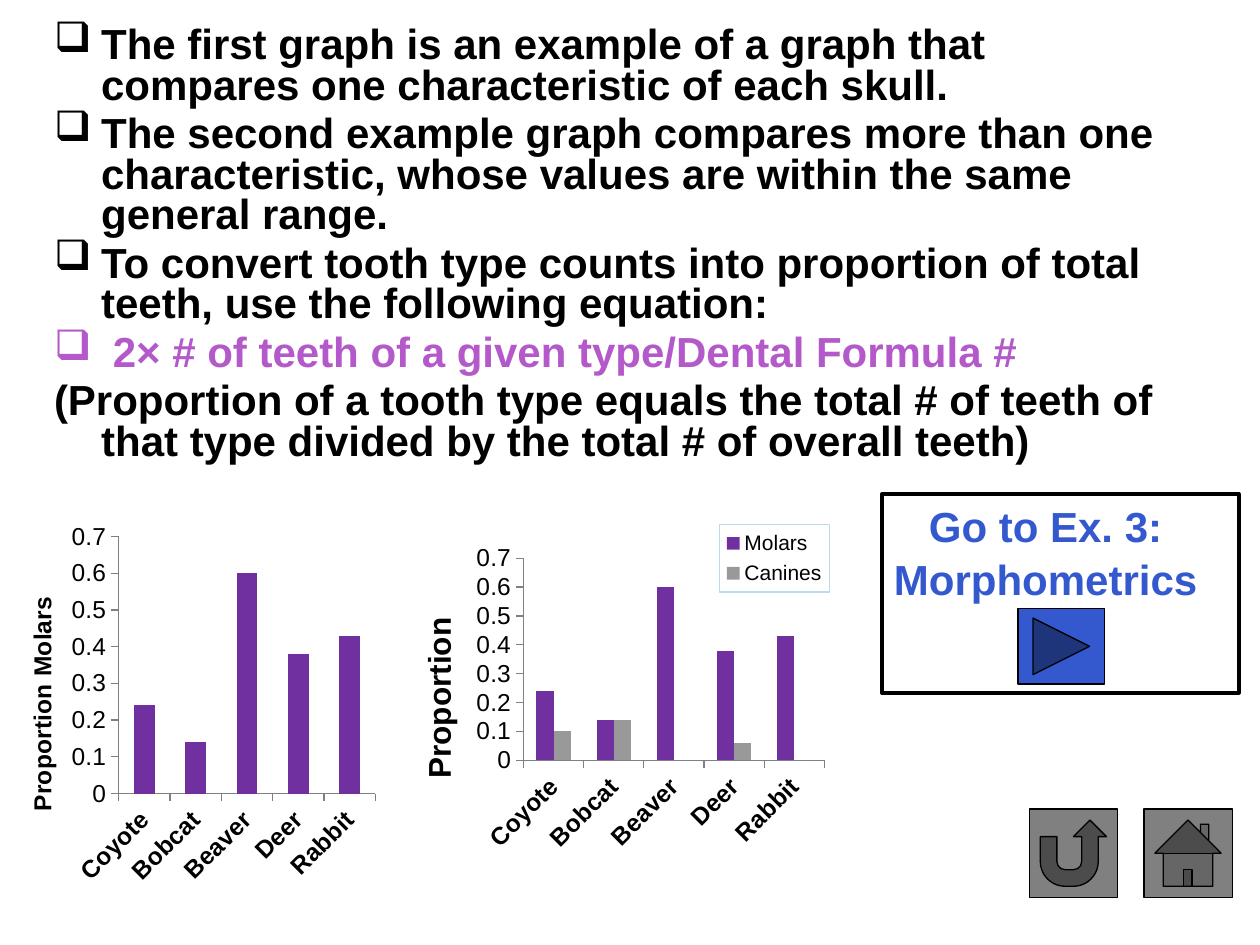
from lxml.etree import SubElement
from pptx import Presentation
from pptx.chart.data import CategoryChartData
from pptx.dml.color import RGBColor
from pptx.enum.chart import XL_CHART_TYPE, XL_LEGEND_POSITION, XL_TICK_MARK
from pptx.enum.shapes import MSO_SHAPE
from pptx.enum.text import PP_ALIGN
from pptx.oxml import parse_xml
from pptx.oxml.ns import nsdecls, qn
from pptx.util import Cm, Pt

FONT = "Arial"
COLORS = {"black": "000000", "orchid": "B459C9", "blue": "3459CE", "button": "808080",
          "purple": "7030A0", "gray": "999999", "axis": "808080", "legend": "B7DEE8"}

# Content: text, color, bullet
POINTS = [
    ("The first graph is an example of a graph that compares one characteristic of each skull.",
     "black", "❑"),
    ("The second example graph compares more than one characteristic, "
     "whose values are within the same general range.", "black", "❑"),
    ("To convert tooth type counts into proportion of total teeth, use the following equation:",
     "black", "❑"),
    (" 2× # of teeth of a given type/Dental Formula #", "orchid", "❑"),
    ("(Proportion of a tooth type equals the total # of teeth of that type "
     "divided by the total # of overall teeth)", "black", None),
]
LINK_LINES = ["Go to Ex. 3:", "Morphometrics"]
ANIMALS = ["Coyote", "Bobcat", "Beaver", "Deer", "Rabbit"]
MOLARS = [0.24, 0.14, 0.6, 0.38, 0.43]
CANINES = [0.1, 0.14, 0, 0.06, 0]

# Frames are left, top, width, height in cm; layouts are fractions of the chart
CHARTS = [
    {"frame": (0, 10.36, 7.72, 7.62), "title": "Proportion Molars", "title_size": 14,
     "plot": (0.31, 0.06, 0.67, 0.68), "legend": None,
     "series": [("Series 1", MOLARS, "purple")]},
    {"frame": (8.05, 9.73, 9.63, 8.48), "title": "Proportion", "title_size": 18,
     "plot": (0.26, 0.18, 0.63, 0.48), "legend": (0.67, 0.1, 0.23, 0.16),
     "series": [("Molars", MOLARS, "purple"), ("Canines", CANINES, "gray")]},
]
SHAPES = [
    (MSO_SHAPE.RECTANGLE, (17.78, 9.96, 7.19, 4.01), None, 2.25),
    (MSO_SHAPE.ACTION_BUTTON_FORWARD_OR_NEXT, (20.52, 12.27, 1.75, 1.52), "blue", 0.75),
    (MSO_SHAPE.ACTION_BUTTON_RETURN, (20.75, 16.31, 1.78, 1.78), "button", 0.75),
    (MSO_SHAPE.ACTION_BUTTON_HOME, (23.06, 16.31, 1.78, 1.78), "button", 0.75),
]


def rgb(name):
    return RGBColor.from_string(COLORS[name])


def place(frame):
    return [Cm(length) for length in frame]


def style_font(font, size, color="black", bold=False):
    font.name, font.size, font.bold = FONT, Pt(size), bold
    font.color.rgb = rgb(color)


def write_text(para, text, size=24, color="black", bold=True, align=PP_ALIGN.LEFT,
               line_spacing=None, before=0, hanging=0, bullet=None):
    span = para.add_run()
    span.text = text
    style_font(span.font, size, color, bold)
    para.alignment, para.space_before = align, Pt(before)
    if line_spacing:
        para.line_spacing = line_spacing
    properties = para._p.get_or_add_pPr()
    if hanging:
        properties.set("marL", str(Cm(hanging)))
        properties.set("indent", str(-Cm(hanging)))
    if bullet:
        SubElement(properties, qn("a:buChar")).set("char", bullet)
    else:
        SubElement(properties, qn("a:buNone"))


def add_text(page, frame, lines):
    box = page.shapes.add_textbox(*place(frame))
    box.text_frame.word_wrap = True
    for index, (text, options) in enumerate(lines):
        para = box.text_frame.add_paragraph() if index else box.text_frame.paragraphs[0]
        write_text(para, text, **options)


def set_layout(element, fractions, inner=False):
    """Fix the place of a plot area or legend inside its chart."""
    for old in element.findall(qn("c:layout")):
        element.remove(old)
    target = '<c:layoutTarget val="inner"/>' if inner else ""
    modes = "".join(f'<c:{axis}Mode val="edge"/>' for axis in "xy")
    sizes = "".join(f'<c:{key} val="{value}"/>' for key, value in zip("xywh", fractions))
    layout = parse_xml(f'<c:layout {nsdecls("c")}><c:manualLayout>{target}{modes}{sizes}'
                       "</c:manualLayout></c:layout>")
    position = element.find(qn("c:legendPos"))
    if position is None:
        element.insert(0, layout)
    else:
        position.addnext(layout)


def style_axis(axis, bold=False):
    style_font(axis.tick_labels.font, 14, bold=bold)
    axis.has_major_gridlines = False
    axis.major_tick_mark = XL_TICK_MARK.OUTSIDE
    axis.minor_tick_mark = XL_TICK_MARK.NONE
    axis.format.line.color.rgb = rgb("axis")
    axis.format.line.width = Pt(0.75)


def add_column_chart(page, content):
    data = CategoryChartData()
    data.categories = ANIMALS
    for name, values, _ in content["series"]:
        data.add_series(name, values)
    chart = page.shapes.add_chart(XL_CHART_TYPE.COLUMN_CLUSTERED,
                                  *place(content["frame"]), data).chart
    style_font(chart.font, 10)
    chart.has_title = False
    plot = chart.plots[0]
    plot.gap_width, plot.overlap, plot.vary_by_categories = 150, 0, False
    for series, (_, _, color) in zip(plot.series, content["series"]):
        series.format.fill.solid()
        series.format.fill.fore_color.rgb = rgb(color)

    # Axes
    style_axis(chart.category_axis, bold=True)
    labels = chart.category_axis._element.find(qn("c:txPr"))
    labels.find(qn("a:bodyPr")).set("rot", "-2700000")
    values = chart.value_axis
    style_axis(values)
    values.minimum_scale, values.maximum_scale, values.major_unit = 0, 0.7, 0.1
    values.tick_labels.number_format = "General"
    values.tick_labels.number_format_is_linked = False
    title = values.axis_title.text_frame
    write_text(title.paragraphs[0], content["title"], size=content["title_size"],
               align=PP_ALIGN.CENTER)
    title._txBody.find(qn("a:bodyPr")).set("rot", "-5400000")
    set_layout(chart._chartSpace.chart.plotArea, content["plot"], inner=True)

    # Legend
    chart.has_legend = content["legend"] is not None
    if chart.has_legend:
        legend = chart.legend
        legend.position = XL_LEGEND_POSITION.CORNER
        legend.include_in_layout = False
        style_font(legend.font, 12)
        set_layout(legend._element, content["legend"])
        legend._element.find(qn("c:txPr")).addprevious(parse_xml(
            f'<c:spPr {nsdecls("c", "a")}><a:ln w="9525"><a:solidFill>'
            f'<a:srgbClr val="{COLORS["legend"]}"/></a:solidFill></a:ln></c:spPr>'))


def add_outlined_shape(page, kind, frame, fill, line_width):
    shape = page.shapes.add_shape(kind, *place(frame))
    shape.shadow.inherit = False
    if fill:
        shape.fill.solid()
        shape.fill.fore_color.rgb = rgb(fill)
    else:
        shape.fill.background()
    shape.line.color.rgb = rgb("black")
    shape.line.width = Pt(line_width)


def main():
    deck = Presentation()
    deck.slide_width, deck.slide_height = Cm(25.4), Cm(19.05)
    page = deck.slides.add_slide(deck.slide_layouts[6])

    # Explanation
    add_text(page, (0.84, 0.43, 23.06, 8.69), [
        (text, {"color": color, "bullet": bullet, "line_spacing": 0.8,
                "before": 4.8, "hanging": 0.95}) for text, color, bullet in POINTS])

    # Link panel and navigation buttons
    add_text(page, (17.37, 9.96, 7.42, 2.31), [
        (text, {"color": "blue", "align": PP_ALIGN.CENTER, "before": 1.5})
        for text in LINK_LINES])
    for kind, frame, fill, line_width in SHAPES:
        add_outlined_shape(page, kind, frame, fill, line_width)

    # Graphs
    for content in CHARTS:
        add_column_chart(page, content)

    deck.save("out.pptx")


if __name__ == "__main__":
    main()
